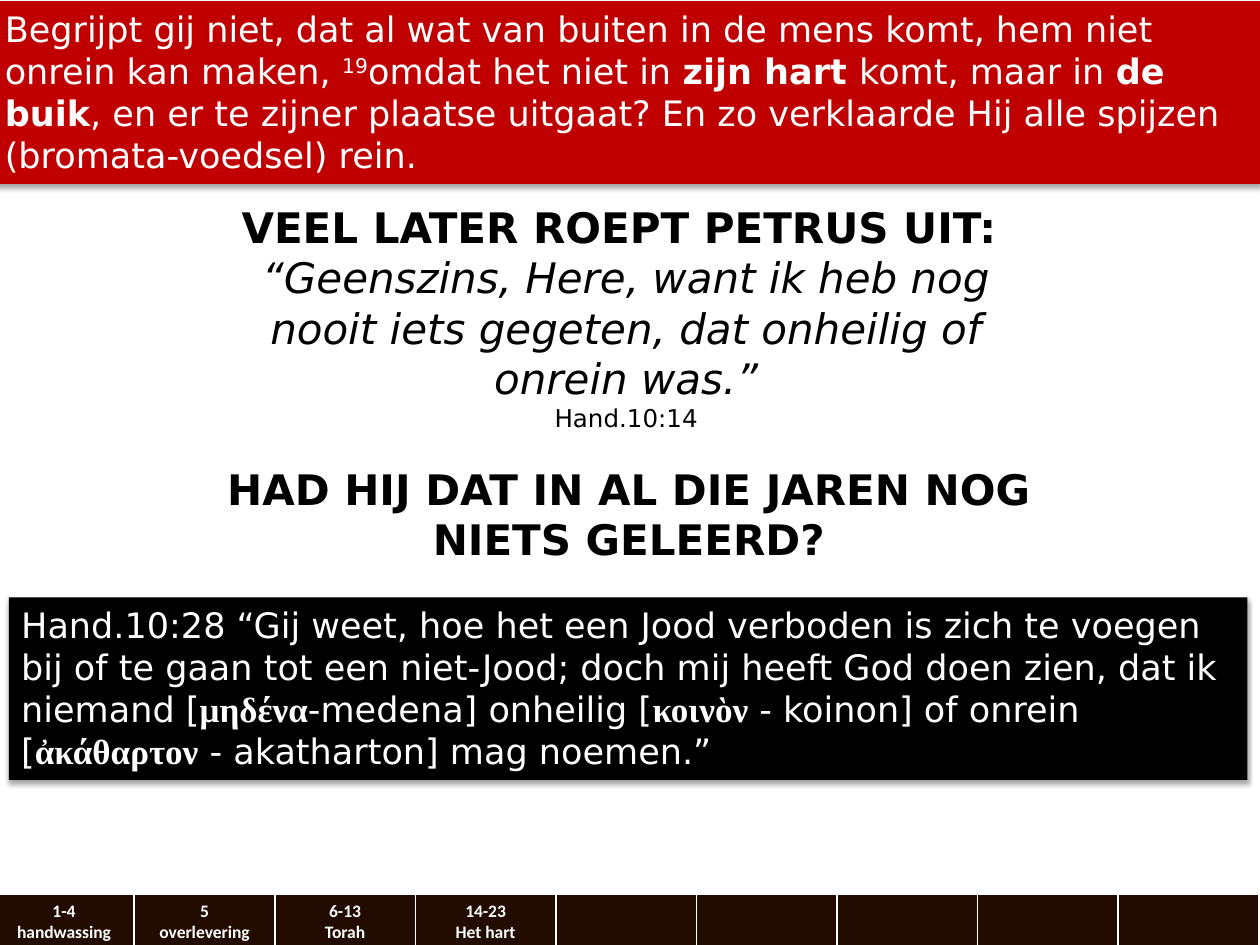
from lxml.etree import SubElement
from pptx import Presentation
from pptx.dml.color import RGBColor
from pptx.enum.shapes import MSO_SHAPE as Shape
from pptx.enum.text import MSO_ANCHOR as Anchor, PP_ALIGN as Align
from pptx.oxml.ns import qn
from pptx.util import Inches, Pt

COLORS = {"white": "FFFFFF", "black": "000000", "red": "C00000", "brown": "220B00"}
BODY = {"name": "DejaVu Sans", "size": Pt(20), "bold": False, "italic": False}
HEADING = BODY | {"size": Pt(24), "bold": True}
QUOTE = BODY | {"size": Pt(24), "italic": True}
CITATION = BODY | {"size": Pt(14)}
TAB = BODY | {"name": "Calibri", "size": Pt(10), "bold": True}
BOLD = BODY | {"bold": True}
GREEK = BOLD | {"name": "Times New Roman"}
BORDERS = {"a:lnL": 1, "a:lnR": 1, "a:lnT": 1, "a:lnB": 3}

VERSE = [
    ("Begrijpt gij niet, dat al wat van buiten in de mens komt, hem niet onrein kan maken, ", BODY),
    ("19", BODY | {"superscript": True}),
    ("omdat het niet in ", BODY),
    ("zijn hart ", BOLD),
    ("komt, maar in ", BODY),
    ("de buik", BOLD),
    (", en er te zijner plaatse uitgaat? En zo verklaarde Hij alle spijzen "
     "(bromata-voedsel) rein.", BODY),
]
PETER = [
    [("VEEL LATER ROEPT PETRUS UIT: ", HEADING)],
    [("“Geenszins, Here, want ik heb nog nooit iets gegeten, dat onheilig of onrein was.”", QUOTE)],
    [("Hand.10:14", CITATION)],
]
QUESTION = [("HAD HIJ DAT IN AL DIE JAREN NOG NIETS GELEERD?", HEADING)]
ANSWER = [
    ("Hand.10:28 “Gij weet, hoe het een Jood verboden is zich te voegen bij of te gaan tot "
     "een niet-Jood; doch mij heeft God doen zien, dat ik niemand [", BODY),
    ("μηδένα", GREEK),
    ("-medena] onheilig [", BODY),
    ("κοινὸν", GREEK),
    (" - koinon] of onrein [", BODY),
    ("ἀκάθαρτον", GREEK),
    (" - akatharton] mag noemen.” ", BODY),
]
TABS = [("1-4", "handwassing"), ("5", "overlevering"), ("6-13", "Torah"), ("14-23", "Het hart")]
TAB_COUNT = 9


class SlideBuilder:
    """Hold the style and the current slide, and draw each kind of element."""

    def __init__(self, deck):
        self.page = deck.slides.add_slide(deck.slide_layouts[6])

    def color(self, name):
        return RGBColor.from_string(COLORS[name])

    def fill(self, target, name):
        target.fill.solid()
        target.fill.fore_color.rgb = self.color(name)

    def add_paragraphs(self, frame, paragraphs, color, align):
        for index, spans in enumerate(paragraphs):
            para = frame.add_paragraph() if index else frame.paragraphs[0]
            para.alignment = align
            for text, style in spans:
                span = para.add_run()
                span.text = text
                span.font.color.rgb = self.color(color)
                for key, value in style.items():
                    if key == "superscript":
                        span.font._element.set("baseline", "30000")
                    else:
                        setattr(span.font, key, value)

    def text(self, place, paragraphs):
        box = self.page.shapes.add_textbox(*map(Inches, place))
        box.text_frame.word_wrap = True
        self.add_paragraphs(box.text_frame, paragraphs, "black", Align.CENTER)

    def panel(self, place, color, spans):
        box = self.page.shapes.add_shape(Shape.RECTANGLE, *map(Inches, place))
        self.fill(box, color)
        box.line.fill.background()
        self.shadow(box)
        box.text_frame.word_wrap = True
        box.text_frame.vertical_anchor = Anchor.TOP
        self.add_paragraphs(box.text_frame, [spans], "white", Align.LEFT)

    def shadow(self, box):
        box.shadow.inherit = False
        effects = box._element.spPr.find(qn("a:effectLst"))
        outer = SubElement(effects, qn("a:outerShdw"), blurRad=str(Pt(3.1)),
                           dist=str(Pt(1.8)), dir="5400000", rotWithShape="0")
        tint = SubElement(outer, qn("a:srgbClr"), val=COLORS["black"])
        SubElement(tint, qn("a:alpha"), val="35000")

    def border(self, cell):
        properties = cell._tc.get_or_add_tcPr()
        for side, width in BORDERS.items():
            line = SubElement(properties, qn(side), w=str(Pt(width)))
            paint = SubElement(line, qn("a:solidFill"))
            SubElement(paint, qn("a:srgbClr"), val=COLORS["white"])

    def tab_bar(self, place, tabs, count):
        table = self.page.shapes.add_table(1, count, *map(Inches, place)).table
        for index, cell in enumerate(table.iter_cells()):
            self.border(cell)
            self.fill(cell, "brown")
            cell.vertical_anchor = Anchor.MIDDLE
            cell.margin_top = cell.margin_bottom = Inches(0.04)
            if index < len(tabs):
                lines = [[(line, TAB)] for line in tabs[index]]
                self.add_paragraphs(cell.text_frame, lines, "white", Align.CENTER)


def main():
    deck = Presentation()
    deck.slide_width, deck.slide_height = Inches(10), Inches(7.5)
    slide = SlideBuilder(deck)
    slide.tab_bar((-0.05, 7.1, 10.04, 0.43), TABS, TAB_COUNT)
    slide.panel((-0.06, 0.01, 10.06, 1.45), "red", VERSE)
    slide.text((1.59, 1.55, 6.76, 1.95), PETER)
    slide.text((1.61, 3.63, 6.76, 0.91), [QUESTION])
    slide.panel((0.07, 4.74, 9.83, 1.45), "black", ANSWER)
    deck.save("out.pptx")


if __name__ == "__main__":
    main()
